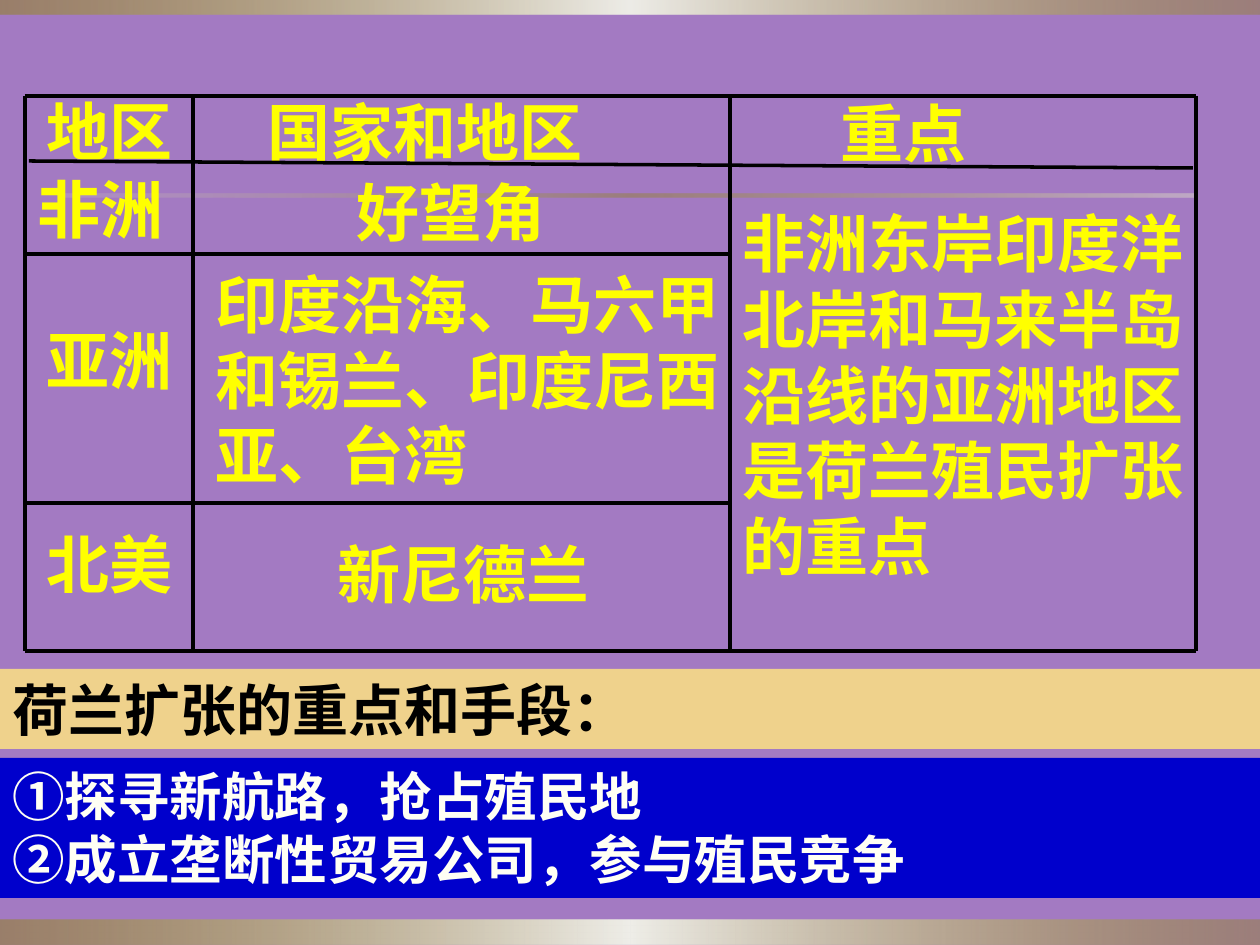
import pptx
import pptx.dml.color
import pptx.enum.shapes
import pptx.enum.text
import pptx.oxml
import pptx.oxml.ns
import pptx.util

EMU_PER_PX = 914400 / 126
SLIDE_W, SLIDE_H = 1260, 945
COLORS = {
    "background": "A37AC2",
    "gold": "918415",
    "silver": "EEEDE8",
    "stone": "DCD9CC",
    "cell": "FFFF00",
    "rule": "000000",
    "heading": "000000",
    "heading_band": "EFD28C",
    "methods": "FFFFF4",
    "methods_band": "0000CC",
}
EDGE_STOPS = [(0, "gold", 50), (50, "silver", 100), (100, "gold", 40)]
DIVIDER_STOPS = [(0, "stone", 20), (50, "gold", 40), (100, "stone", 50)]

LEFT, REGION_END, PLACES_END, RIGHT = 25, 193, 730, 1196
TOP, AFRICA_END, ASIA_END, BOTTOM = 96, 254, 503, 651
OUTER, INNER = 2.25, 2
RULES = [
    (LEFT, TOP, RIGHT, TOP, OUTER),
    (29, 161, 1193, 168, INNER),
    (LEFT, AFRICA_END, PLACES_END, AFRICA_END, INNER),
    (LEFT, ASIA_END, PLACES_END, ASIA_END, INNER),
    (LEFT, BOTTOM, RIGHT, BOTTOM, OUTER),
    (LEFT, TOP, LEFT, BOTTOM, OUTER),
    (REGION_END, TOP, REGION_END, BOTTOM, INNER),
    (PLACES_END, TOP, PLACES_END, BOTTOM, INNER),
    (RIGHT, TOP, RIGHT, BOTTOM, OUTER),
]
CELLS = [
    ("地区", 34, 96, 189, 69),
    ("国家和地区", 255, 95, 575, 72),
    ("重点", 828, 96, 218, 72),
    ("非洲", 25, 165, 159, 86),
    ("好望角", 344, 168, 278, 86),
    ("亚洲", 34, 294, 181, 130),
    ("印度沿海、马六甲和锡兰、印度尼西亚、台湾", 203, 265, 536, 228),
    ("北美", 34, 512, 181, 103),
    ("新尼德兰", 325, 522, 297, 103),
    ("非洲东岸印度洋北岸和马来半岛沿线的亚洲地区是荷兰殖民扩张的重点", 730, 185, 496, 418),
]


def px(*lengths):
    """Convert pixel lengths to EMU."""
    return [pptx.util.Emu(round(length * EMU_PER_PX)) for length in lengths]


def rgb(name):
    """Look up a named colour."""
    return pptx.dml.color.RGBColor.from_string(COLORS[name])


def add_band(slide, x, y, width, height):
    """Add a plain rectangle without outline or shadow."""
    band = slide.shapes.add_shape(
        pptx.enum.shapes.MSO_SHAPE.RECTANGLE, *px(x, y, width, height))
    band.shadow.inherit = False
    band.line.fill.background()
    return band


def add_gradient_band(slide, x, y, width, height, stops):
    """Add a rectangle with a horizontal, partly transparent gradient."""
    band = add_band(slide, x, y, width, height)
    band.fill.gradient()
    band.fill.gradient_angle = 0
    stop_list = band._element.spPr.find(".//" + pptx.oxml.ns.qn("a:gsLst"))
    for default_stop in list(stop_list):
        stop_list.remove(default_stop)
    for position, color, opacity in stops:
        stop_list.append(pptx.oxml.parse_xml(
            f'<a:gs {pptx.oxml.ns.nsdecls("a")} pos="{position * 1000}">'
            f'<a:srgbClr val="{COLORS[color]}"><a:alpha val="{opacity * 1000}"/>'
            '</a:srgbClr></a:gs>'))


def write(shape, lines, size, font_name, color, anchor):
    """Fill a shape with bold, left-aligned paragraphs."""
    frame = shape.text_frame
    frame.word_wrap = True
    frame.vertical_anchor = anchor
    frame.text = "\n".join(lines)
    for paragraph in frame.paragraphs:
        paragraph.alignment = pptx.enum.text.PP_ALIGN.LEFT
        font = paragraph.font
        font.size = pptx.util.Pt(size)
        font.name = font_name
        font.bold = True
        font.color.rgb = rgb(color)


def add_cell(slide, text, x, y, width, height):
    """Add the text of one cell of the grid."""
    cell = slide.shapes.add_textbox(*px(x, y, width, height))
    write(cell, [text], 36, "Cabin", "cell", pptx.enum.text.MSO_ANCHOR.MIDDLE)


def add_rule(slide, x1, y1, x2, y2, weight):
    """Add one rule of the grid."""
    rule = slide.shapes.add_connector(
        pptx.enum.shapes.MSO_CONNECTOR.STRAIGHT, *px(x1, y1, x2, y2))
    rule.line.color.rgb = rgb("rule")
    rule.line.width = pptx.util.Pt(weight)
    rule._element.spPr.append(pptx.oxml.parse_xml(
        f'<a:effectLst {pptx.oxml.ns.nsdecls("a")}/>'))


def add_text_band(slide, y, height, fill, lines, size, font_name, color):
    """Add a full-width coloured band of text."""
    band = add_band(slide, 0, y, SLIDE_W, height)
    band.fill.solid()
    band.fill.fore_color.rgb = rgb(fill)
    write(band, lines, size, font_name, color, pptx.enum.text.MSO_ANCHOR.TOP)


def main():
    """Build the slide on Dutch expansion."""
    deck = pptx.Presentation()
    deck.slide_width, deck.slide_height = px(SLIDE_W, SLIDE_H)
    slide = deck.slides.add_slide(deck.slide_layouts[6])
    slide.background.fill.solid()
    slide.background.fill.fore_color.rgb = rgb("background")

    add_gradient_band(slide, 0, 920, SLIDE_W, 25, EDGE_STOPS)
    add_gradient_band(slide, 0, 0, SLIDE_W, 15, EDGE_STOPS)
    add_gradient_band(slide, 63, 194, 1134, 3, DIVIDER_STOPS)
    for cell in CELLS:
        add_cell(slide, *cell)
    for rule in RULES:
        add_rule(slide, *rule)
    add_text_band(slide, 669, 80, "heading_band", ["荷兰扩张的重点和手段："],
                  32, "Times New Roman", "heading")
    add_text_band(slide, 758, 140, "methods_band",
                  ["①探寻新航路，抢占殖民地", "②成立垄断性贸易公司，参与殖民竞争"],
                  30, "Arial", "methods")
    deck.save("out.pptx")


if __name__ == "__main__":
    main()
